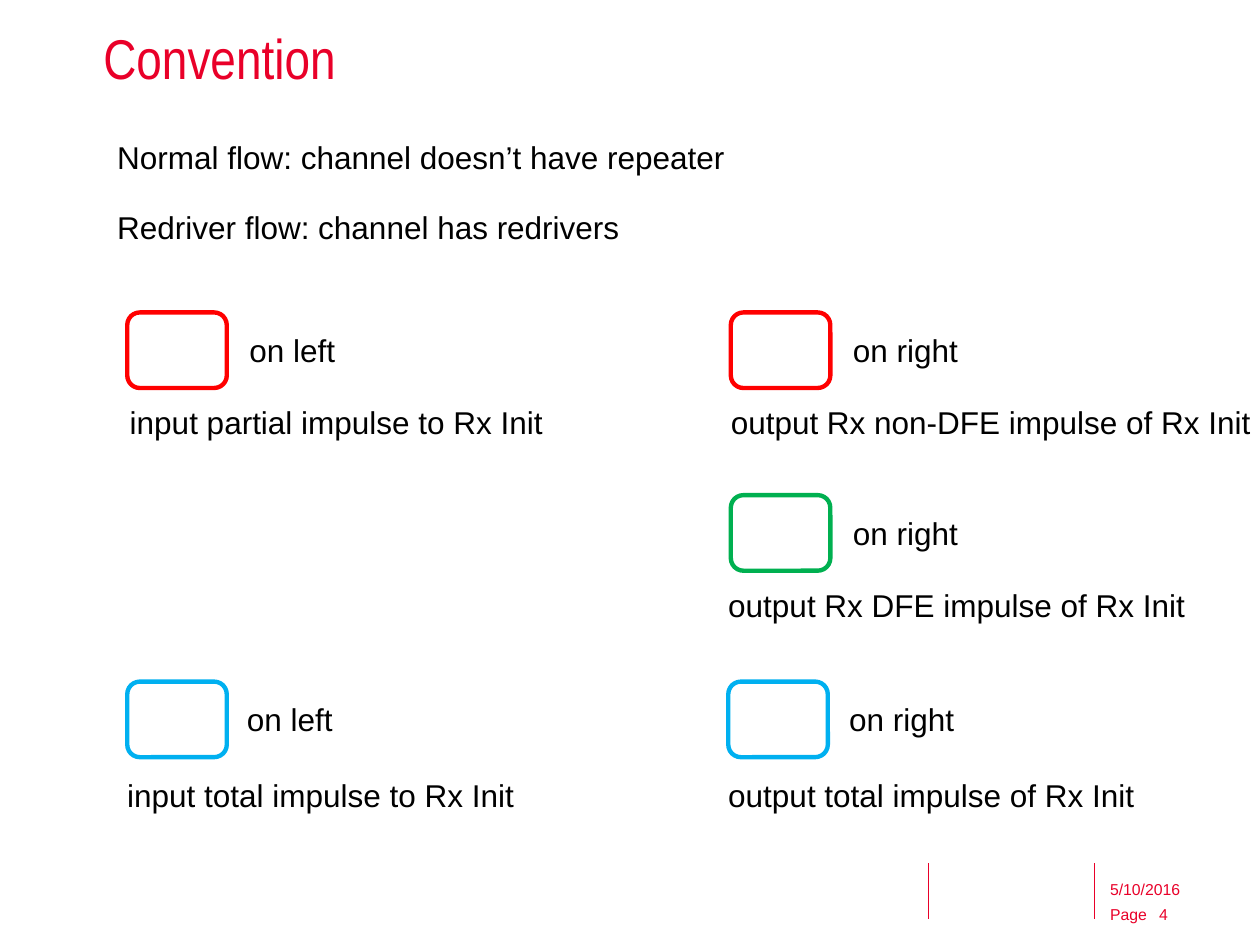
from dataclasses import dataclass

from pptx import Presentation
from pptx.dml.color import RGBColor
from pptx.enum.shapes import MSO_CONNECTOR, MSO_SHAPE
from pptx.enum.text import MSO_ANCHOR, MSO_AUTO_SIZE, PP_ALIGN
from pptx.oxml.ns import qn
from pptx.util import Inches, Pt
from lxml import etree

ROUNDED = MSO_SHAPE.ROUNDED_RECTANGLE
STRAIGHT = MSO_CONNECTOR.STRAIGHT
TOP, BOTTOM = MSO_ANCHOR.TOP, MSO_ANCHOR.BOTTOM
LEFT = PP_ALIGN.LEFT
NO_RESIZE = MSO_AUTO_SIZE.NONE
TITLE_ONLY = 5
COLUMNS, ROWS = 100, 75


@dataclass(frozen=True)
class Theme:
    accent: str = "E90029"
    text: str = "000000"
    red: str = "FF0000"
    green: str = "00B050"
    blue: str = "00B0F0"
    body_font: str = "Arial"
    title_font: str = "Arial Narrow"
    title_size: int = 32
    body_size: int = 18
    footer_size: int = 9
    outline: float = 2.5
    rule: float = 0.5


class SlideBuilder:
    def __init__(self, presentation, theme):
        self.theme = theme
        self.cell_width = presentation.slide_width / COLUMNS
        self.cell_height = presentation.slide_height / ROWS
        self.slide = presentation.slides.add_slide(presentation.slide_layouts[TITLE_ONLY])

    def place(self, column, row, columns, rows):
        return (round(column * self.cell_width), round(row * self.cell_height),
                round(columns * self.cell_width), round(rows * self.cell_height))

    def set_text(self, shape, lines, font, size, color, anchor, margins, spacing=None, wrap=True):
        frame = shape.text_frame
        frame.text = "\n".join(lines)
        frame.word_wrap = wrap
        frame.auto_size = NO_RESIZE
        frame.vertical_anchor = anchor
        (frame.margin_left, frame.margin_top,
         frame.margin_right, frame.margin_bottom) = map(Inches, margins)
        for index, paragraph in enumerate(frame.paragraphs):
            paragraph.alignment = LEFT
            paragraph.space_before = Pt(size if index else 0)
            if spacing:
                paragraph.line_spacing = spacing
            for run in paragraph.runs:
                run.font.name = font
                run.font.size = Pt(size)
                run.font.color.rgb = RGBColor.from_string(color)

    def title(self, text, *area):
        shape = self.slide.shapes.title
        shape.left, shape.top, shape.width, shape.height = self.place(*area)
        self.set_text(shape, [text], self.theme.title_font, self.theme.title_size,
                      self.theme.accent, BOTTOM, (0, 0, 0, 0), 0.9)

    def body(self, lines, *area):
        shape = self.slide.shapes.add_textbox(*self.place(*area))
        self.set_text(shape, lines, self.theme.body_font, self.theme.body_size,
                      self.theme.text, TOP, (0, 0.05, 0.1, 0.05), wrap=False)

    def footer(self, text, *area, spacing=None):
        shape = self.slide.shapes.add_textbox(*self.place(*area))
        self.set_text(shape, [text], self.theme.body_font, self.theme.footer_size,
                      self.theme.accent, BOTTOM, (0, 0, 0, 0), spacing, wrap=False)

    def rule(self, column, top, bottom):
        left, start, _, height = self.place(column, top, 0, bottom - top)
        line = self.slide.shapes.add_connector(STRAIGHT, left, start, left, start + height)
        line.line.color.rgb = RGBColor.from_string(self.theme.accent)
        line.line.width = Pt(self.theme.rule)
        etree.SubElement(line._element.spPr, qn("a:effectLst"))

    def swatch(self, color, *area):
        shape = self.slide.shapes.add_shape(ROUNDED, *self.place(*area))
        shape.shadow.inherit = False
        shape.fill.background()
        shape.line.color.rgb = RGBColor.from_string(color)
        shape.line.width = Pt(self.theme.outline)

    def legend(self, color, column, row, side, label_column, caption, caption_column, caption_row):
        self.swatch(color, column, row, 7.9, 6)
        self.body([side], label_column, row + 1, 9.4, 4)
        self.body([caption], caption_column, caption_row, 43.4, 4)


def main():
    presentation = Presentation()
    presentation.slide_width = Inches(10)
    presentation.slide_height = Inches(7.5)
    theme = Theme()
    builder = SlideBuilder(presentation, theme)

    builder.title("Convention", 8.2, 1.7, 78.7, 5.6)
    builder.body(["Normal flow: channel doesn’t have repeater",
                  "Redriver flow: channel has redrivers"], 9.3, 10.5, 49.7, 9.6)

    entries = [
        (theme.red, 10.1, 24.8, "on left", 19.8, "input partial impulse to Rx Init", 10.3, 31.5),
        (theme.red, 58, 24.8, "on right", 67.7, "output Rx non-DFE impulse of Rx Init", 58, 31.5),
        (theme.green, 58, 39.3, "on right", 67.7, "output Rx DFE impulse of Rx Init", 57.8, 46),
        (theme.blue, 10.1, 54.1, "on left", 19.6, "input total impulse to Rx Init", 10.1, 61.1),
        (theme.blue, 57.8, 54.1, "on right", 67.4, "output total impulse of Rx Init", 57.8, 61.1),
    ]
    for entry in entries:
        builder.legend(*entry)

    for column in (73.7, 86.9):
        builder.rule(column, 68.5, 72.9)
    builder.footer("5/10/2016", 88.1, 67.3, 11.9, 4)
    builder.footer("Page", 88.1, 71.8, 2.9, 1.5, spacing=1.1)
    builder.footer("4", 92, 71, 3, 2.3, spacing=1.1)

    presentation.save("out.pptx")


if __name__ == "__main__":
    main()
